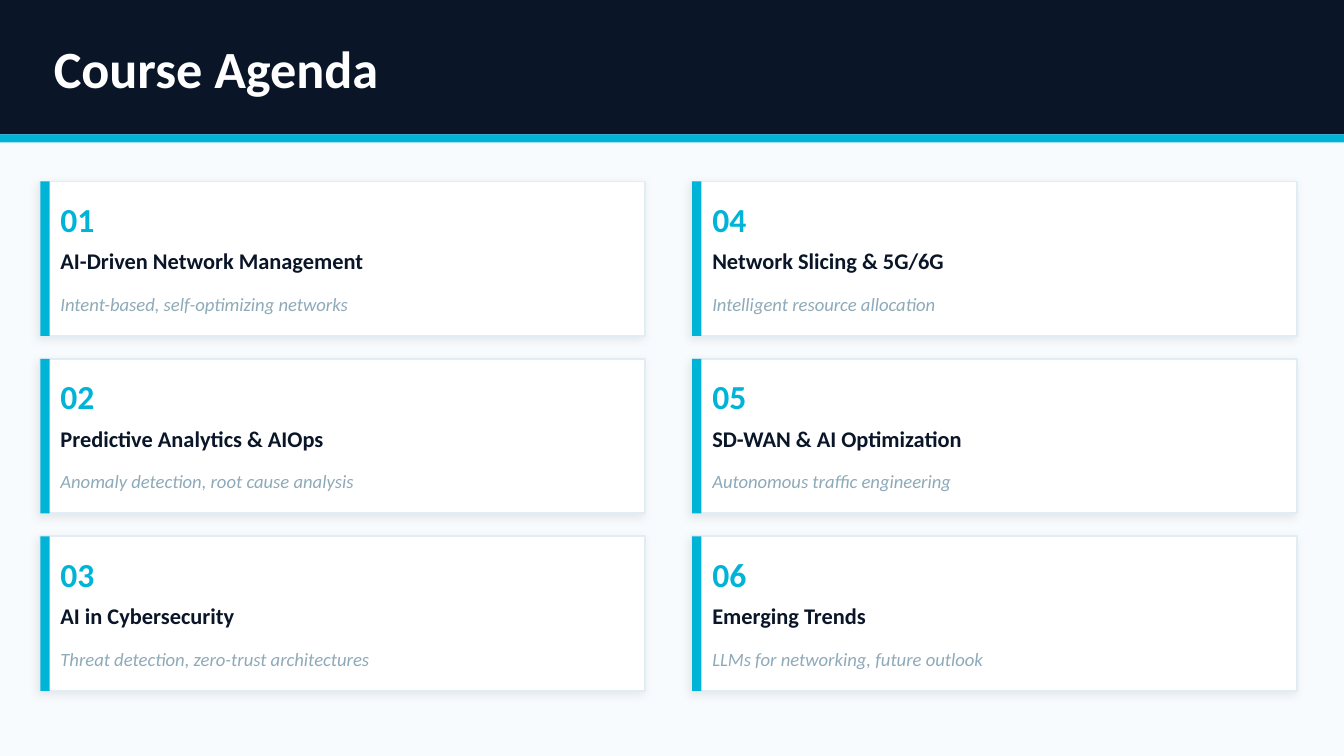
"""Build the course agenda slide with six numbered topic cards."""
from lxml.etree import SubElement
from pptx import Presentation
from pptx.dml.color import RGBColor
from pptx.enum.shapes import MSO_SHAPE
from pptx.enum.text import MSO_ANCHOR, MSO_AUTO_SIZE, PP_ALIGN
from pptx.oxml.ns import qn
from pptx.util import Pt

NAVY = RGBColor(0x0A, 0x16, 0x28)
CYAN = RGBColor(0x00, 0xB4, 0xD8)
WHITE = RGBColor(0xFF, 0xFF, 0xFF)
BACKGROUND = RGBColor(0xF7, 0xFB, 0xFD)
BORDER = RGBColor(0xE0, 0xED, 0xF5)
MUTED = RGBColor(0x8E, 0xAA, 0xB9)

TOPICS = [
    ("AI-Driven Network Management", "Intent-based, self-optimizing networks"),
    ("Predictive Analytics & AIOps", "Anomaly detection, root cause analysis"),
    ("AI in Cybersecurity", "Threat detection, zero-trust architectures"),
    ("Network Slicing & 5G/6G", "Intelligent resource allocation"),
    ("SD-WAN & AI Optimization", "Autonomous traffic engineering"),
    ("Emerging Trends", "LLMs for networking, future outlook"),
]
ROWS = 3
CARD_WIDTH, CARD_HEIGHT = 324, 82.8
COLUMN_STEP, ROW_STEP = 349.2, 95.04

TITLE_FORMAT = {"size": Pt(28), "bold": True, "italic": False}
NUMBER_FORMAT = {"size": Pt(18), "bold": True, "italic": False}
TOPIC_FORMAT = {"size": Pt(12), "bold": True, "italic": False}
DETAIL_FORMAT = {"size": Pt(10), "bold": False, "italic": True}

presentation = Presentation()
presentation.slide_width, presentation.slide_height = Pt(720), Pt(405)
slide = presentation.slides.add_slide(presentation.slide_layouts[5])
slide.background.fill.solid()
slide.background.fill.fore_color.rgb = BACKGROUND


def add_rectangle(left, top, width, height, color):
    shape = slide.shapes.add_shape(
        MSO_SHAPE.RECTANGLE, Pt(left), Pt(top), Pt(width), Pt(height))
    shape.shadow.inherit = False
    shape.fill.solid()
    shape.fill.fore_color.rgb = color
    shape.line.fill.background()
    return shape


def write_text(shape, text, color, font_format):
    frame = shape.text_frame
    frame.text = text
    frame_format = {
        "margin_left": 0, "margin_top": 0, "margin_right": 0, "margin_bottom": 0,
        "word_wrap": True, "auto_size": MSO_AUTO_SIZE.NONE,
        "vertical_anchor": MSO_ANCHOR.MIDDLE,
    }
    for name, value in frame_format.items():
        setattr(frame, name, value)
    paragraph = frame.paragraphs[0]
    paragraph.alignment = PP_ALIGN.LEFT
    font = paragraph.runs[0].font
    for name, value in {"name": "Calibri", **font_format}.items():
        setattr(font, name, value)
    font.color.rgb = color


add_rectangle(0, 0, 720, 72, NAVY)
add_rectangle(0, 72, 720, 4.32, CYAN)

title = slide.shapes.title
title_place = {"left": Pt(28.8), "top": Pt(0), "width": Pt(648), "height": Pt(72)}
for name, value in title_place.items():
    setattr(title, name, value)
write_text(title, "Course Agenda", WHITE, TITLE_FORMAT)
slide.shapes._spTree.append(title._element)

for index, (topic, detail) in enumerate(TOPICS):
    column, row = divmod(index, ROWS)
    left = 21.6 + column * COLUMN_STEP
    top = 97.2 + row * ROW_STEP

    card = add_rectangle(left, top, CARD_WIDTH, CARD_HEIGHT, WHITE)
    card.line.color.rgb = BORDER
    card.line.width = Pt(1)
    effects = card._element.spPr.find(qn("a:effectLst"))
    shadow = SubElement(effects, qn("a:outerShdw"), blurRad=str(Pt(5)),
                        dist=str(Pt(2)), dir=str(135 * 60000),
                        algn="bl", rotWithShape="0")
    shadow_color = SubElement(shadow, qn("a:srgbClr"), val="000000")
    SubElement(shadow_color, qn("a:alpha"), val="7000")

    add_rectangle(left, top, 5.04, CARD_HEIGHT, CYAN)

    card_texts = [
        (f"{index + 1:02d}", 5.76, 39.6, 28.8, CYAN, NUMBER_FORMAT),
        (topic, 28.8, 295.2, 27.36, NAVY, TOPIC_FORMAT),
        (detail, 54, 295.2, 23.04, MUTED, DETAIL_FORMAT),
    ]
    for text, offset, width, height, color, font_format in card_texts:
        text_box = slide.shapes.add_textbox(
            Pt(left + 10.8), Pt(top + offset), Pt(width), Pt(height))
        write_text(text_box, text, color, font_format)

presentation.save("out.pptx")
